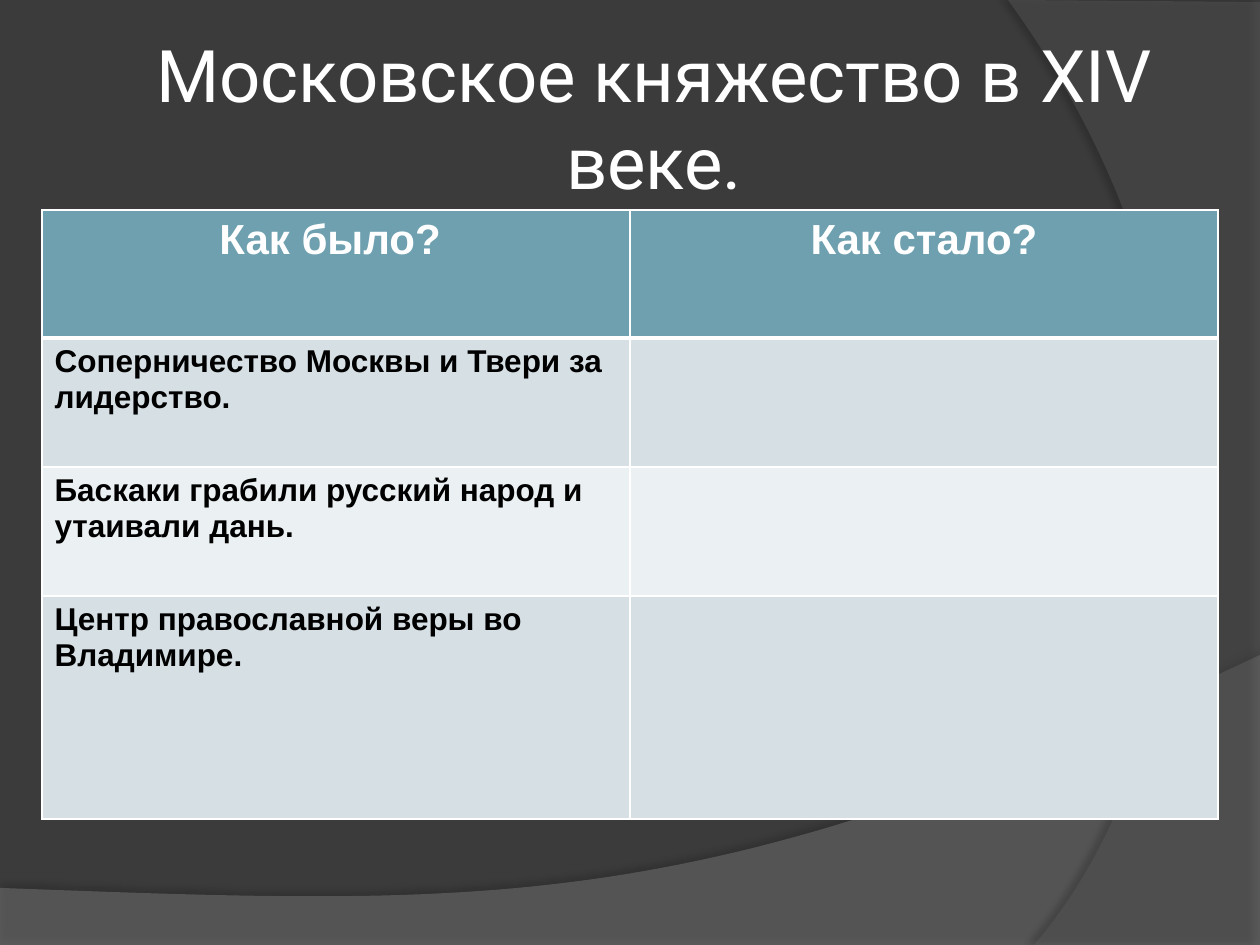
from dataclasses import dataclass

from lxml.etree import SubElement
from pptx import Presentation
from pptx.dml.color import RGBColor
from pptx.enum.text import MSO_ANCHOR, PP_ALIGN
from pptx.oxml.ns import qn
from pptx.util import Pt

EMU_PER_PX = 914400 / 126
CURVE_STEPS = 60


@dataclass(frozen=True)
class Theme:
    background: str = "3B3B3B"
    wave: str = "7F7F7F"
    arc: str = "5E5E5E"
    shadow: str = "000000"
    light: str = "FFFFFF"
    dark: str = "000000"
    header: str = "6EA0B0"
    bands: tuple = ("D5DFE4", "EBF0F2")
    title_font: str = "Roboto"
    table_font: str = "Arial"
    title_size: float = 41.4
    header_size: int = 24
    body_size: int = 18


THEME = Theme()
TITLE = "Московское княжество в XIV веке."
ROWS = [
    ("Как было? ", "Как стало?"),
    ("Соперничество Москвы и Твери за лидерство.", ""),
    ("Баскаки грабили русский народ и утаивали дань.", ""),
    ("Центр православной веры во Владимире.", ""),
]
ROW_HEIGHTS = (128, 129, 129, 223)
COLUMN_WIDTH = 588


def px(n):
    return round(n * EMU_PER_PX)


def rgb(color):
    return RGBColor.from_string(color)


def solid(fill, color):
    fill.solid()
    fill.fore_color.rgb = rgb(color)


def add_color(parent, color, opacity=100):
    clr = SubElement(parent, qn("a:srgbClr"), val=color)
    if opacity < 100:
        SubElement(clr, qn("a:alpha"), val=str(opacity * 1000))


def curve(p0, p1, p2, p3):
    """Points along a cubic Bezier curve, in px, without its start."""
    for i in range(1, CURVE_STEPS + 1):
        t = i / CURVE_STEPS
        weights = ((1 - t) ** 3, 3 * t * (1 - t) ** 2, 3 * t * t * (1 - t), t ** 3)
        yield tuple(sum(w * c for w, c in zip(weights, axis))
                    for axis in zip(p0, p1, p2, p3))


def add_backdrop(slide, points, color, opacity, shadow_opacity, distance, angle):
    """Translucent outline that casts a soft shadow."""
    points = [(px(x), px(y)) for x, y in points]
    builder = slide.shapes.build_freeform(*points[0])
    builder.add_line_segments(points[1:], close=True)
    sp = builder.convert_to_shape()
    sp.shadow.inherit = False
    sp.line.fill.background()
    solid(sp.fill, color)
    props = sp._element.spPr
    clr = props.find(qn("a:solidFill"))[0]
    SubElement(clr, qn("a:alpha"), val=str(opacity * 1000))
    shadow = SubElement(props.find(qn("a:effectLst")), qn("a:outerShdw"),
                        blurRad=str(Pt(4)), dist=str(Pt(distance)),
                        dir=str(angle * 60000), algn="ctr", rotWithShape="0")
    add_color(shadow, THEME.shadow, shadow_opacity)


def write(tf, text, align, **font):
    p = tf.paragraphs[0]
    p.alignment = align
    r = p.add_run()
    r.text = text
    r.font.color.rgb = rgb(font.pop("color"))
    for name, value in font.items():
        setattr(r.font, name, value)


def add_title(slide, text):
    tf = slide.shapes.add_textbox(px(63), px(38), px(1182), px(157)).text_frame
    frame = {"word_wrap": True, "vertical_anchor": MSO_ANCHOR.MIDDLE}
    frame |= {f"margin_{side}": px(6) for side in ("left", "top", "right", "bottom")}
    for name, value in frame.items():
        setattr(tf, name, value)
    write(tf, text, PP_ALIGN.CENTER, name=THEME.title_font,
          size=Pt(THEME.title_size), color=THEME.light)


def set_borders(cell, **widths):
    props = cell._tc.get_or_add_tcPr()
    for side in "LRTB":
        line = SubElement(props, qn(f"a:ln{side}"), w=str(Pt(widths.get(side, 1))))
        add_color(SubElement(line, qn("a:solidFill")), THEME.light)


def add_comparison(slide, rows):
    table = slide.shapes.add_table(
        len(rows), len(rows[0]), px(42), px(210),
        px(COLUMN_WIDTH * len(rows[0])), px(sum(ROW_HEIGHTS))).table
    table.horz_banding = False
    for column in table.columns:
        column.width = px(COLUMN_WIDTH)
    for i, texts in enumerate(rows):
        table.rows[i].height = px(ROW_HEIGHTS[i])
        if i == 0:
            fill, borders, align = THEME.header, {"B": 3}, PP_ALIGN.CENTER
            font = {"size": Pt(THEME.header_size), "color": THEME.light}
        else:
            fill = THEME.bands[(i - 1) % 2]
            borders, align = ({"T": 3} if i == 1 else {}), PP_ALIGN.LEFT
            font = {"size": Pt(THEME.body_size), "color": THEME.dark}
        for j, text in enumerate(texts):
            cell = table.cell(i, j)
            set_borders(cell, **borders)
            solid(cell.fill, fill)
            if text:
                write(cell.text_frame, text, align,
                      name=THEME.table_font, bold=True, **font)


def main():
    prs = Presentation()
    prs.slide_width, prs.slide_height = px(1260), px(945)
    slide = prs.slides.add_slide(prs.slide_layouts[6])
    solid(slide.background.fill, THEME.background)

    wave = [(0, 888), (0, 945), (1260, 945), (1260, 655),
            *curve((1260, 655), (704, 919), (493, 906), (0, 888))]
    arc = [(1260, 2), (1260, 945), (1034, 945),
           *curve((1034, 945), (1178, 780), (1283, 378), (1008, 0))]
    add_backdrop(slide, wave, THEME.wave, 45, 35, 3.5, 270)
    add_backdrop(slide, arc, THEME.arc, 40, 45, 4, 180)
    add_title(slide, TITLE)
    add_comparison(slide, ROWS)
    prs.save("out.pptx")


if __name__ == "__main__":
    main()
